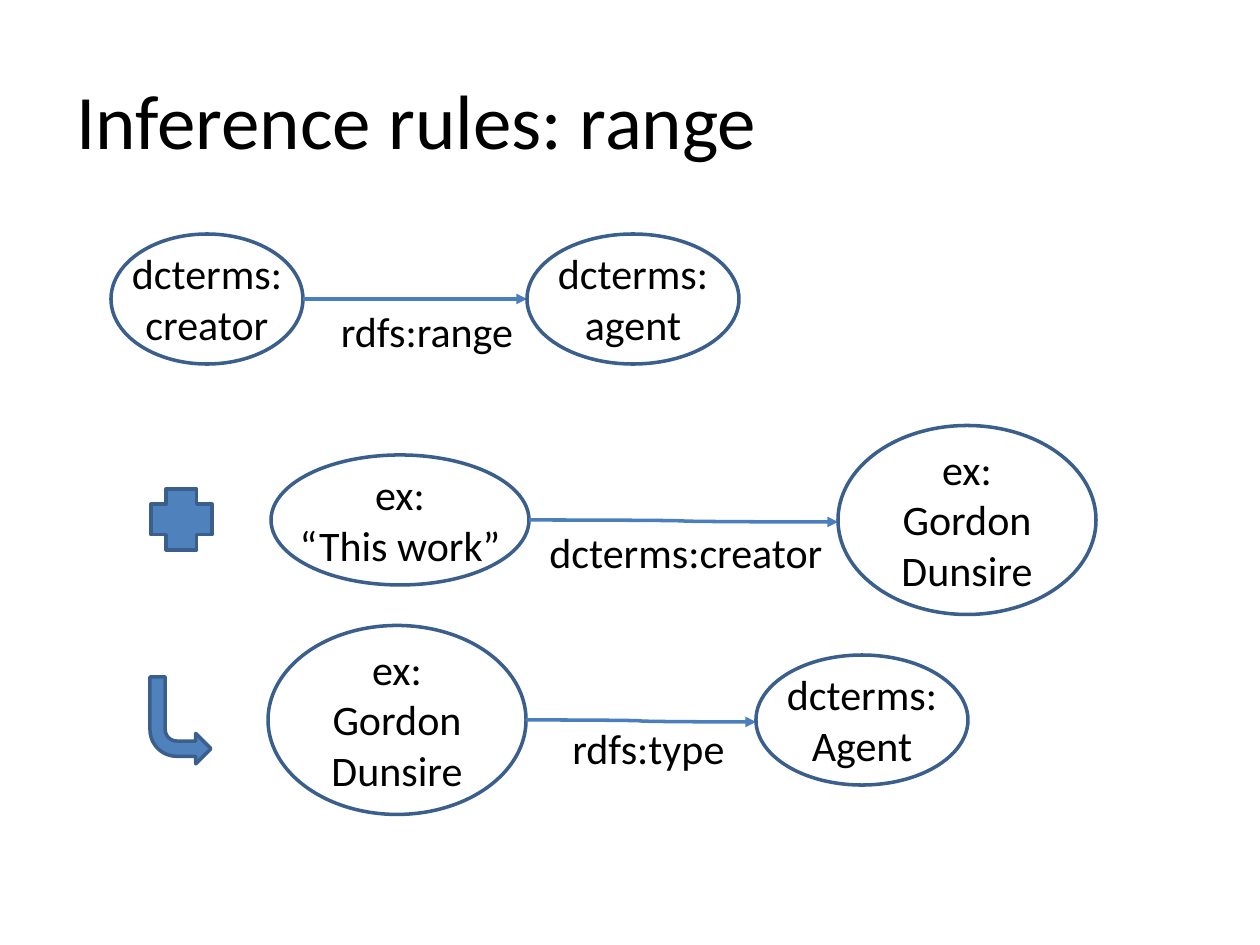
from lxml import etree
from pptx import Presentation
from pptx.dml.color import RGBColor
from pptx.enum.shapes import MSO_CONNECTOR, MSO_SHAPE
from pptx.enum.text import MSO_ANCHOR, PP_ALIGN
from pptx.oxml.ns import qn
from pptx.util import Emu, Pt

PX = 914400 / 126
FONT = "Calibri"
BLACK, FILL, EDGE, LINK = "000000", "4F81BD", "3A5F8C", "4B7EBC"
ELLIPSE, PLUS, BENT_ARROW = MSO_SHAPE.OVAL, MSO_SHAPE.CROSS, MSO_SHAPE.BENT_ARROW
CURVE = MSO_CONNECTOR.CURVE
LEFT, CENTER = PP_ALIGN.LEFT, PP_ALIGN.CENTER
TOP = MSO_ANCHOR.TOP
TITLE_ONLY = 5
LABEL_HEIGHT = 60
INSET = 5

CREATOR = (192, 130, 199, ["dcterms:", "creator"])
AGENT = (212, 130, 200, ["dcterms:", "agent"])
AGENT_CLASS = (212, 130, 200, ["dcterms:", "Agent"])
WORK = (258, 130, 223, ["ex:", "“This work”"])
PERSON = (258, 189, 223, ["ex:", "Gordon Dunsire"])

STATEMENTS = [
    ((111, 299), CREATOR, (224, 0, "rdfs:range", (23, 2, 202)), AGENT),
    ((271, 520), WORK, (309, 2, "dcterms:creator", (-2, 2, 318)), PERSON),
    ((268, 720), PERSON, (230, 2, "rdfs:type", (16, -2, 213)), AGENT_CLASS),
]


def px(*lengths):
    """Turn px lengths into EMU."""
    return [Emu(round(length * PX)) for length in lengths]


def color(value):
    """Turn a hex string into a colour."""
    return RGBColor.from_string(value)


def write(frame, lines, size, align):
    """Write one paragraph per line."""
    for index, line in enumerate(lines):
        paragraph = frame.add_paragraph() if index else frame.paragraphs[0]
        paragraph.alignment = align
        run = paragraph.add_run()
        run.text = line
        run.font.name = FONT
        run.font.size = Pt(size)
        run.font.color.rgb = color(BLACK)


def add_title(slide, box, wording):
    """Place the slide title in the title placeholder."""
    title = slide.shapes.title
    title.left, title.top, title.width, title.height = px(*box)
    title.text_frame.word_wrap = False
    title.text_frame.vertical_anchor = TOP
    write(title.text_frame, [wording], 44, LEFT)


def add_label(shapes, box, lines):
    """Place a centred label."""
    frame = shapes.add_textbox(*px(*box)).text_frame
    frame.word_wrap = True
    frame.margin_left, frame.margin_top, frame.margin_right, frame.margin_bottom = px(*[INSET] * 4)
    write(frame, lines, 24, CENTER)


def add_outline(shapes, kind, box, fill=None):
    """Place an outlined preset shape, filled if a fill is given."""
    outline = shapes.add_shape(kind, *px(*box))
    outline.shadow.inherit = False
    outline.line.color.rgb = color(EDGE)
    outline.line.width = Pt(2)
    if fill:
        outline.fill.solid()
        outline.fill.fore_color.rgb = color(fill)
    else:
        outline.fill.background()
    return outline


def add_node(slide, left, axis, node):
    """Place a labelled ellipse centred on a horizontal axis."""
    width, height, label_width, lines = node
    group = slide.shapes.add_group_shape().shapes
    add_outline(group, ELLIPSE, (left, axis - height / 2, width, height))
    label_height = round(height * 0.86)
    label_left = left + (width - label_width) / 2
    add_label(group, (label_left, axis - label_height / 2, label_width, label_height), lines)


def add_link(slide, left, axis, link):
    """Place an arrow with its predicate below."""
    length, drop, predicate, (label_left, label_top, label_width) = link
    group = slide.shapes.add_group_shape().shapes
    arrow = group.add_connector(CURVE, *px(left, axis, left + length, axis + drop))
    arrow.line.color.rgb = color(LINK)
    arrow.line.width = Pt(2)
    etree.SubElement(arrow.line._get_or_add_ln(), qn("a:tailEnd"), type="triangle")
    etree.SubElement(arrow._element.spPr, qn("a:effectLst"))
    add_label(group, (left + label_left, axis + label_top, label_width, LABEL_HEIGHT), [predicate])


def add_statement(slide, start, subject, link, target):
    """Place a subject, its predicate and its object in one row."""
    left, axis = start
    link_left = left + subject[0]
    add_node(slide, left, axis, subject)
    add_link(slide, link_left, axis, link)
    add_node(slide, link_left + link[0], axis, target)


def add_signs(slide, box):
    """Place the plus sign and the conclusion arrow below it."""
    left, top, width, height = box
    arrow_height = 87
    add_outline(slide.shapes, PLUS, (left + 1, top, width, width), FILL)
    conclusion = add_outline(
        slide.shapes, BENT_ARROW, (left, top + height - arrow_height, width, arrow_height), FILL
    )
    conclusion._element.spPr.xfrm.set("flipV", "1")


def main():
    """Build the slide and save it."""
    deck = Presentation()
    deck.slide_width, deck.slide_height = px(1260, 945)
    slide = deck.slides.add_slide(deck.slide_layouts[TITLE_ONLY])
    add_title(slide, (64, 66, 713, 106), "Inference rules: range")
    for statement in STATEMENTS:
        add_statement(slide, *statement)
    add_signs(slide, (150, 489, 61, 275))
    deck.save("out.pptx")


if __name__ == "__main__":
    main()
